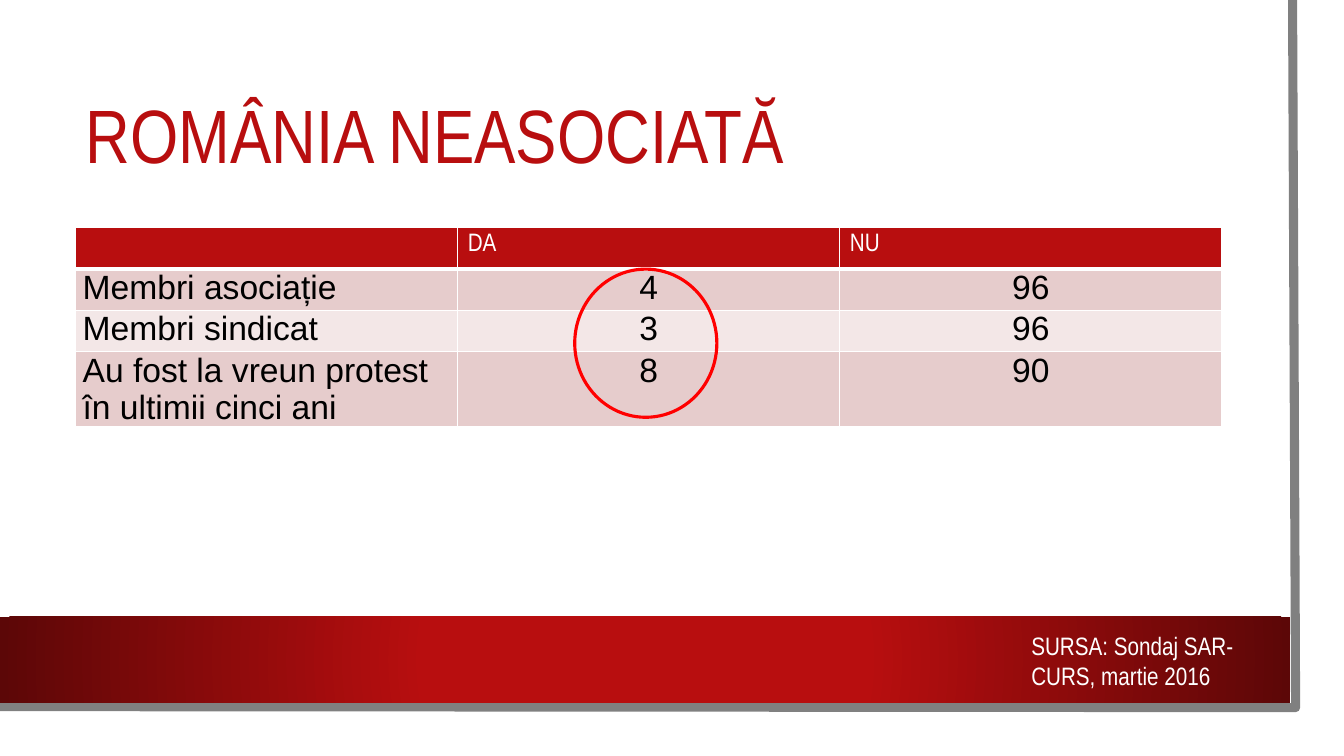
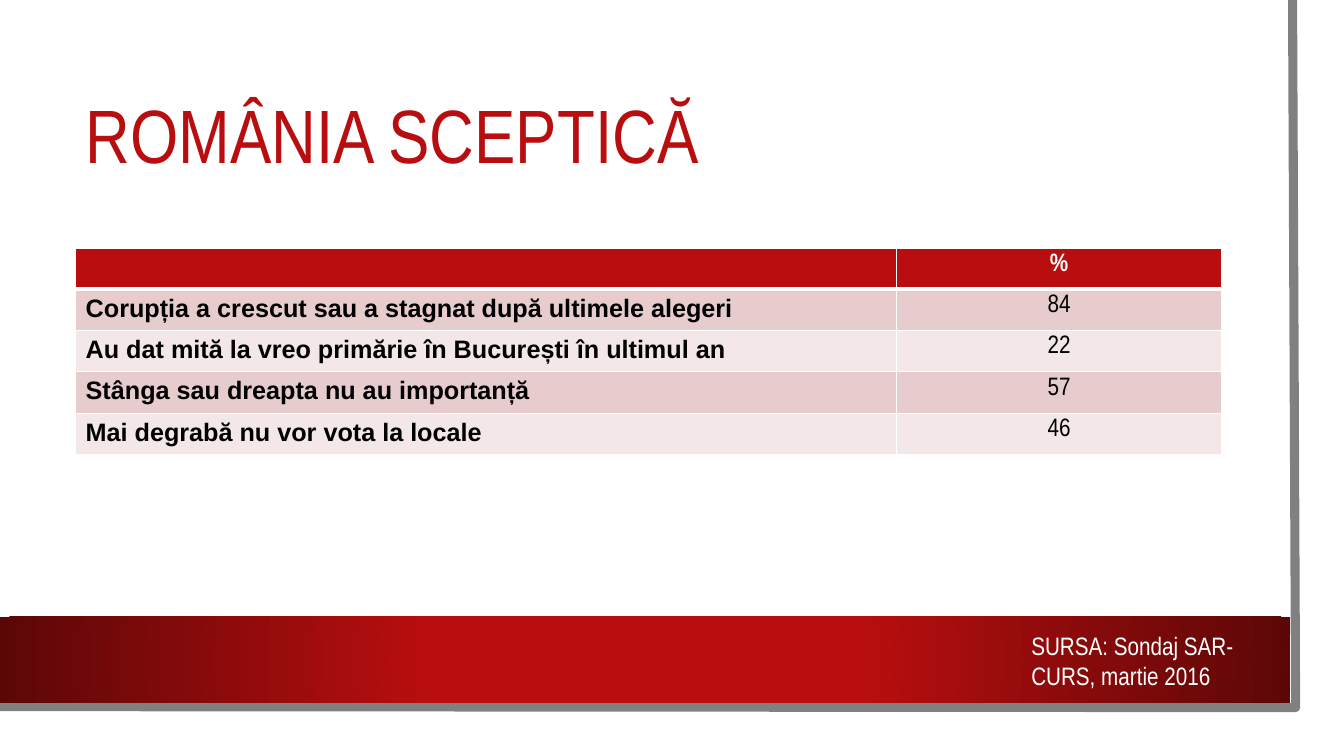
from pptx import Presentation
from pptx.dml.color import RGBColor
from pptx.enum.shapes import MSO_SHAPE as Shape
from pptx.enum.text import MSO_ANCHOR as Anchor, MSO_AUTO_SIZE as AutoSize, PP_ALIGN as Align
from pptx.oxml import parse_xml
from pptx.oxml.ns import nsdecls
from pptx.util import Inches, Pt

COLORS = {
    "red": "B80E0F", "dark": "5C0707", "gray": "808080", "white": "FFFFFF",
    "black": "000000", "ring": "FF0000", "odd": "E6CCCC", "even": "F3E7E7",
}
NARROW, WIDE = "Arial Narrow", "Arial"
SOURCE = "SURSA: Sondaj SAR-CURS, martie 2016"
LEFT, WIDTH, ROW_HEIGHT = 0.75, 11.37, 0.41
TITLE_BOX = (LEFT, 0.75, WIDTH, 1.26)
SOURCE_BOX = (10.13, 6.2, 2.45, 0.71)
RING_BOX = (5.7, 2.67, 1.41, 1.47)
FRAME_POINTS = [(12.82, 0), (12.85, 7.02), (-0.03, 7.01)]

SLIDES = [
    {
        "title": "ROMÂNIA NEASOCIATĂ",
        "top": 2.26,
        "columns": [3.79, 3.79, 3.79],
        "rows": [
            ("", "DA", "NU"),
            ("Membri asociație", "4", "96"),
            ("Membri sindicat", "3", "96"),
            ("Au fost la vreun protest în ultimii cinci ani", "8", "90"),
        ],
        "header": {"font": NARROW, "size": 18, "align": Align.LEFT},
        "label": {"font": WIDE, "size": 24},
        "value": {"font": WIDE, "size": 24, "align": Align.CENTER},
        "tight": True,
        "ring": True,
    },
    {
        "title": "ROMÂNIA SCEPTICĂ",
        "top": 2.46,
        "columns": [8.14, 3.23],
        "rows": [
            ("", "%"),
            ("Corupția a crescut sau a stagnat după ultimele alegeri", "84"),
            ("Au dat mită la vreo primărie în București în ultimul an", "22"),
            ("Stânga sau dreapta nu au importanță", "57"),
            ("Mai degrabă nu vor vota la locale", "46"),
        ],
        "header": {"font": NARROW, "size": 18, "bold": True, "align": Align.CENTER},
        "label": {"font": WIDE, "size": 18, "bold": True},
        "value": {"font": NARROW, "size": 18, "align": Align.CENTER},
        "tight": False,
        "ring": False,
    },
]


def rgb(name):
    return RGBColor.from_string(COLORS[name])


def inches(values):
    return [Inches(value) for value in values]


def write(frame, text, color, font, size, bold=False, align=Align.LEFT):
    frame.text = text
    para = frame.paragraphs[0]
    para.alignment = align
    for span in para.runs:
        span.font.name = font
        span.font.size = Pt(size)
        span.font.bold = bold
        span.font.color.rgb = rgb(color)


def add_plain_shape(page, kind, bounds, fill=None):
    shape = page.shapes.add_shape(kind, *inches(bounds))
    shape.shadow.inherit = False
    shape.line.fill.background()
    if fill:
        shape.fill.solid()
        shape.fill.fore_color.rgb = rgb(fill)
    else:
        shape.fill.background()
    return shape


def add_outline(shape, color, width):
    shape.line.color.rgb = rgb(color)
    shape.line.width = Pt(width)


def fill_radial(shape, stops):
    marks = "".join(
        f'<a:gs pos="{share * 1000}"><a:srgbClr val="{COLORS[name]}"/></a:gs>'
        for share, name in stops
    )
    gradient = parse_xml(
        f'<a:gradFill {nsdecls("a")} rotWithShape="1"><a:gsLst>{marks}</a:gsLst>'
        '<a:path path="circle"><a:fillToRect l="50000" t="50000" r="50000" b="50000"/>'
        '</a:path></a:gradFill>'
    )
    solid = shape.fill._xPr.find("{http://schemas.openxmlformats.org/drawingml/2006/main}solidFill")
    solid.getparent().replace(solid, gradient)


def decorate_layout(layout, page):
    panel = add_plain_shape(page, Shape.RECTANGLE, (0, 0, 13.1, 7.27), "white")
    start, *rest = [inches(point) for point in FRAME_POINTS]
    builder = page.shapes.build_freeform(*start)
    builder.add_line_segments(rest, close=False)
    edge = builder.convert_to_shape()
    edge.shadow.inherit = False
    edge.fill.background()
    add_outline(edge, "gray", 6.5)
    band = add_plain_shape(page, Shape.RECTANGLE, (0, 6.12, 12.8, 0.85), "red")
    fill_radial(band, [(34, "red"), (100, "dark")])
    for index, shape in enumerate((panel, edge, band), start=2):
        layout.shapes.element.insert(index, shape.element)


def add_title(page, text):
    box = page.shapes.title
    box.left, box.top, box.width, box.height = inches(TITLE_BOX)
    write(box.text_frame, text, "red", NARROW, 54)
    box.text_frame.auto_size = AutoSize.NONE
    box.text_frame.vertical_anchor = Anchor.MIDDLE
    box.text_frame.paragraphs[0].line_spacing = 0.9


def add_source(page):
    box = page.shapes.add_textbox(*inches(SOURCE_BOX))
    box.text_frame.word_wrap = True
    write(box.text_frame, SOURCE, "white", NARROW, 18)


def set_borders(cell, bottom, top):
    widths = {"lnL": 1, "lnR": 1, "lnT": top, "lnB": bottom}
    properties = cell._tc.get_or_add_tcPr()
    for index, (side, width) in enumerate(widths.items()):
        properties.insert(index, parse_xml(
            f'<a:{side} {nsdecls("a")} w="{Pt(width)}"><a:solidFill>'
            f'<a:srgbClr val="{COLORS["white"]}"/></a:solidFill></a:{side}>'
        ))


def add_data_table(page, content):
    rows, columns = content["rows"], content["columns"]
    bounds = (LEFT, content["top"], WIDTH, ROW_HEIGHT * len(rows))
    table = page.shapes.add_table(len(rows), len(columns), *inches(bounds)).table
    for column, width in zip(table.columns, columns):
        column.width = Inches(width)
    for r, values in enumerate(rows):
        table.rows[r].height = Inches(ROW_HEIGHT)
        for c, text in enumerate(values):
            cell = table.cell(r, c)
            style = content["header" if r == 0 else "value" if c else "label"]
            write(cell.text_frame, text, "black" if r else "white", **style)
            cell.fill.solid()
            cell.fill.fore_color.rgb = rgb("red" if r == 0 else "odd" if r % 2 else "even")
            if r and content["tight"]:
                cell.margin_left = cell.margin_right = Inches(0.07)
                cell.margin_top = cell.margin_bottom = 0
            set_borders(cell, bottom=1 if r else 3, top=3 if r == 1 else 1)


def main():
    deck = Presentation()
    deck.slide_width, deck.slide_height = inches((13.33, 7.5))
    layout = deck.slide_layouts[5]
    for number, content in enumerate(SLIDES):
        page = deck.slides.add_slide(layout)
        if number == 0:
            decorate_layout(layout, page)
        add_title(page, content["title"])
        add_data_table(page, content)
        add_source(page)
        if content["ring"]:
            add_outline(add_plain_shape(page, Shape.OVAL, RING_BOX), "ring", 2.25)
    deck.save("out.pptx")


if __name__ == "__main__":
    main()
